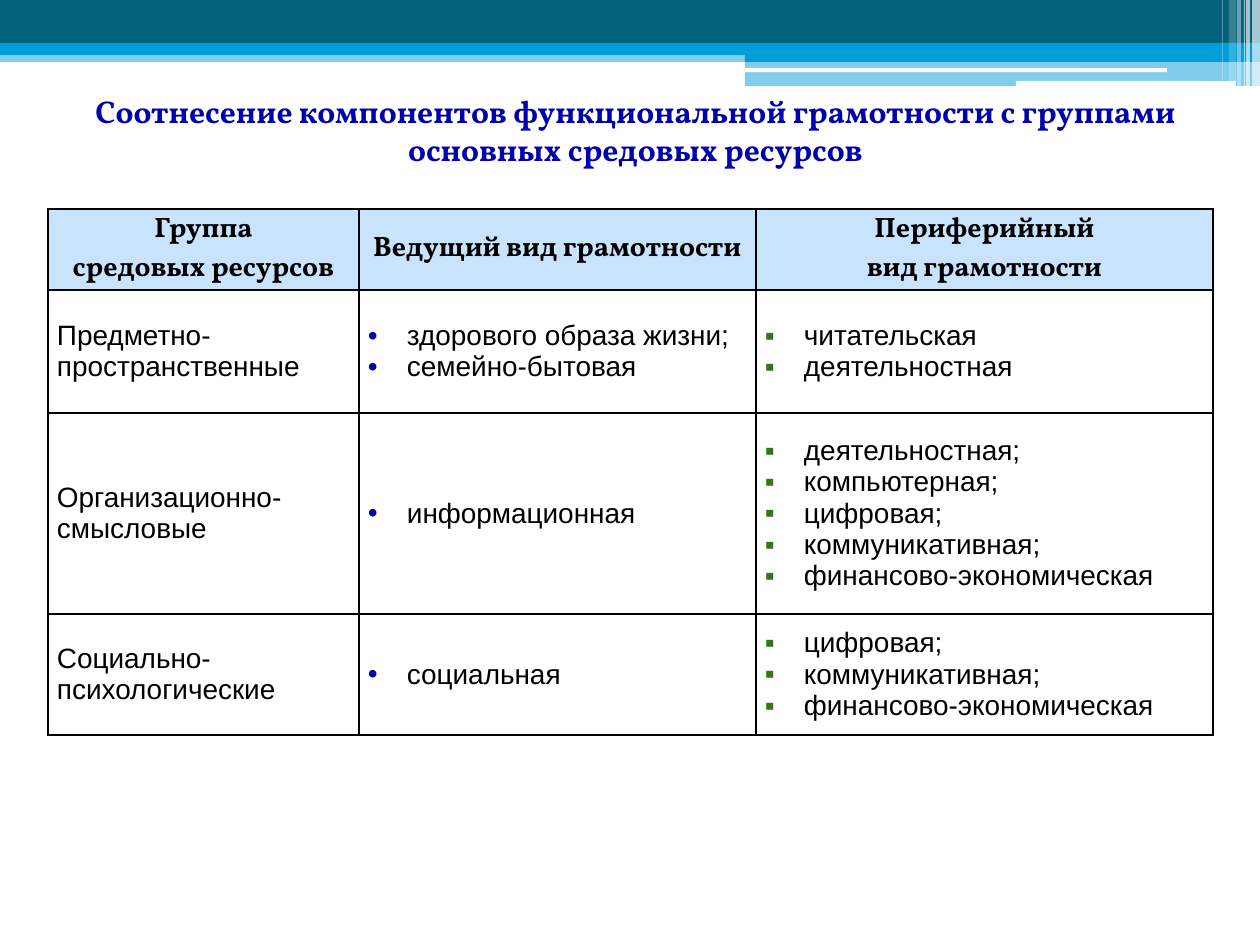
from pptx import Presentation
from pptx import util as u
from pptx.dml.color import RGBColor
from pptx.enum import shapes, text
from pptx.oxml import parse_xml
from pptx.oxml.ns import nsdecls, qn
from lxml import etree

# Content
TITLE = "Соотнесение компонентов функциональной грамотности с группами основных средовых ресурсов"
HEADER = [
    ["Группа", "средовых ресурсов"],
    ["Ведущий вид грамотности"],
    ["Периферийный", "вид грамотности"],
]
RESOURCE_GROUPS = [
    (["Предметно-пространственные"],
     ["здорового образа жизни;", "семейно-бытовая"],
     ["читательская", "деятельностная"]),
    (["Организационно-смысловые"],
     ["информационная"],
     ["деятельностная;", "компьютерная;", "цифровая;", "коммуникативная;",
      "финансово-экономическая"]),
    (["Социально-психологические"],
     ["социальная"],
     ["цифровая;", "коммуникативная;", "финансово-экономическая"]),
]

THEME = dict(
    teal="04617B", sky="009DD9", white="FFFFFF", black="000000",
    title="0000AC", header="C8E3FB", green="387026",
    heading_font="Vollkorn", body_font="Arial", title_size=18, table_size=16,
)
COLUMN_BULLETS = [None, ("•", THEME["title"]), ("▪", THEME["green"])]

# Layout in px, 126 to the inch
SCALE = 914400 / 126
COLUMNS = [311, 397, 457]
ROWS = [81, 123, 201, 121]
TABLE_AT = (48, 209)
TITLE_AT = (30, 86, 1211, 89)
SIDE_MARGIN, HANGING = 9, 39

# Banner: left, top, width, height, colour, opacity in %
BANDS = [
    (0, 50, 1260, 12, "sky", 50),
    (0, 0, 1260, 43, "teal", 100),
    (0, 43, 1260, 12, "sky", 100),
    (745, 49, 515, 13, "sky", 100),
    (745, 61, 515, 25, "sky", 50),
]
RULES = [(745, 68, 422, 4, "white", 100), (1016, 81, 220, 5, "white", 100)]
STRIPES = [
    (1252, 0, 8, 86, "white", 65),
    (1246, 0, 4, 86, "white", 65),
    (1244, 0, 1, 86, "white", 60),
    (1237, 0, 4, 86, "white", 40),
    (1229, 0, 7, 81, "white", 20),
    (1222, 0, 1, 81, "white", 30),
]


def px(value):
    return u.Emu(round(value * SCALE))


def rgb(colour):
    return RGBColor.from_string(colour)


def add_bar(slide, kind, left, top, width, height, colour, opacity):
    bar = slide.shapes.add_shape(kind, *map(px, (left, top, width, height)))
    bar.shadow.inherit = False
    bar.line.fill.background()
    bar.fill.solid()
    bar.fill.fore_color.rgb = rgb(THEME[colour])
    if opacity < 100:
        solid = bar._element.spPr.find(qn("a:solidFill"))
        etree.SubElement(solid[0], qn("a:alpha"), val=str(opacity * 1000))


def write(frame, lines, *, font, size, colour, bold=False, align=None, bullet=None):
    for index, line in enumerate(lines):
        paragraph = frame.add_paragraph() if index else frame.paragraphs[0]
        paragraph.alignment = align
        run = paragraph.add_run()
        run.text = line
        run.font.name, run.font.size, run.font.bold = font, u.Pt(size), bold
        run.font.color.rgb = rgb(colour)
        if bullet:
            symbol, symbol_colour = bullet
            props = paragraph._p.get_or_add_pPr()
            props.set("marL", str(px(HANGING)))
            props.set("indent", str(-px(HANGING)))
            tint = etree.SubElement(props, qn("a:buClr"))
            etree.SubElement(tint, qn("a:srgbClr"), val=symbol_colour)
            etree.SubElement(props, qn("a:buFont"), typeface=THEME["body_font"])
            etree.SubElement(props, qn("a:buChar"), char=symbol)


def format_cell(cell, fill):
    cell.vertical_anchor = text.MSO_ANCHOR.MIDDLE
    cell.margin_left = cell.margin_right = px(SIDE_MARGIN)
    cell.margin_top = cell.margin_bottom = 0
    props = cell._tc.get_or_add_tcPr()
    for side in ("lnL", "lnR", "lnT", "lnB"):
        props.append(parse_xml(
            f'<a:{side} {nsdecls("a")} w="{u.Pt(1)}"><a:solidFill>'
            f'<a:srgbClr val="{THEME["black"]}"/></a:solidFill></a:{side}>'))
    if fill:
        cell.fill.solid()
        cell.fill.fore_color.rgb = rgb(fill)
    else:
        cell.fill.background()


def add_resource_table(slide):
    grid = [HEADER, *RESOURCE_GROUPS]
    table = slide.shapes.add_table(
        len(ROWS), len(COLUMNS),
        *map(px, (*TABLE_AT, sum(COLUMNS), sum(ROWS)))).table
    table.horz_banding = False
    for column, width in zip(table.columns, COLUMNS):
        column.width = px(width)
    for row, height in zip(table.rows, ROWS):
        row.height = px(height)

    shared = dict(size=THEME["table_size"], colour=THEME["black"])
    for r, row in enumerate(grid):
        for c, lines in enumerate(row):
            cell = table.cell(r, c)
            format_cell(cell, None if r else THEME["header"])
            if r:
                write(cell.text_frame, lines, font=THEME["body_font"],
                      bullet=COLUMN_BULLETS[c], **shared)
            else:
                write(cell.text_frame, lines, font=THEME["heading_font"],
                      bold=True, align=text.PP_ALIGN.CENTER, **shared)


def main():
    deck = Presentation()
    deck.slide_width, deck.slide_height = px(1260), px(945)
    slide = deck.slides.add_slide(deck.slide_layouts[6])

    # Banner
    for kind, bars in (
        (shapes.MSO_SHAPE.RECTANGLE, BANDS),
        (shapes.MSO_SHAPE.ROUNDED_RECTANGLE, RULES),
        (shapes.MSO_SHAPE.RECTANGLE, STRIPES),
    ):
        for bar in bars:
            add_bar(slide, kind, *bar)

    # Title
    title = slide.shapes.add_textbox(*map(px, TITLE_AT)).text_frame
    title.word_wrap = True
    write(title, [TITLE], font=THEME["heading_font"], size=THEME["title_size"],
          colour=THEME["title"], bold=True, align=text.PP_ALIGN.CENTER)

    # Table
    add_resource_table(slide)
    deck.save("out.pptx")


if __name__ == "__main__":
    main()
